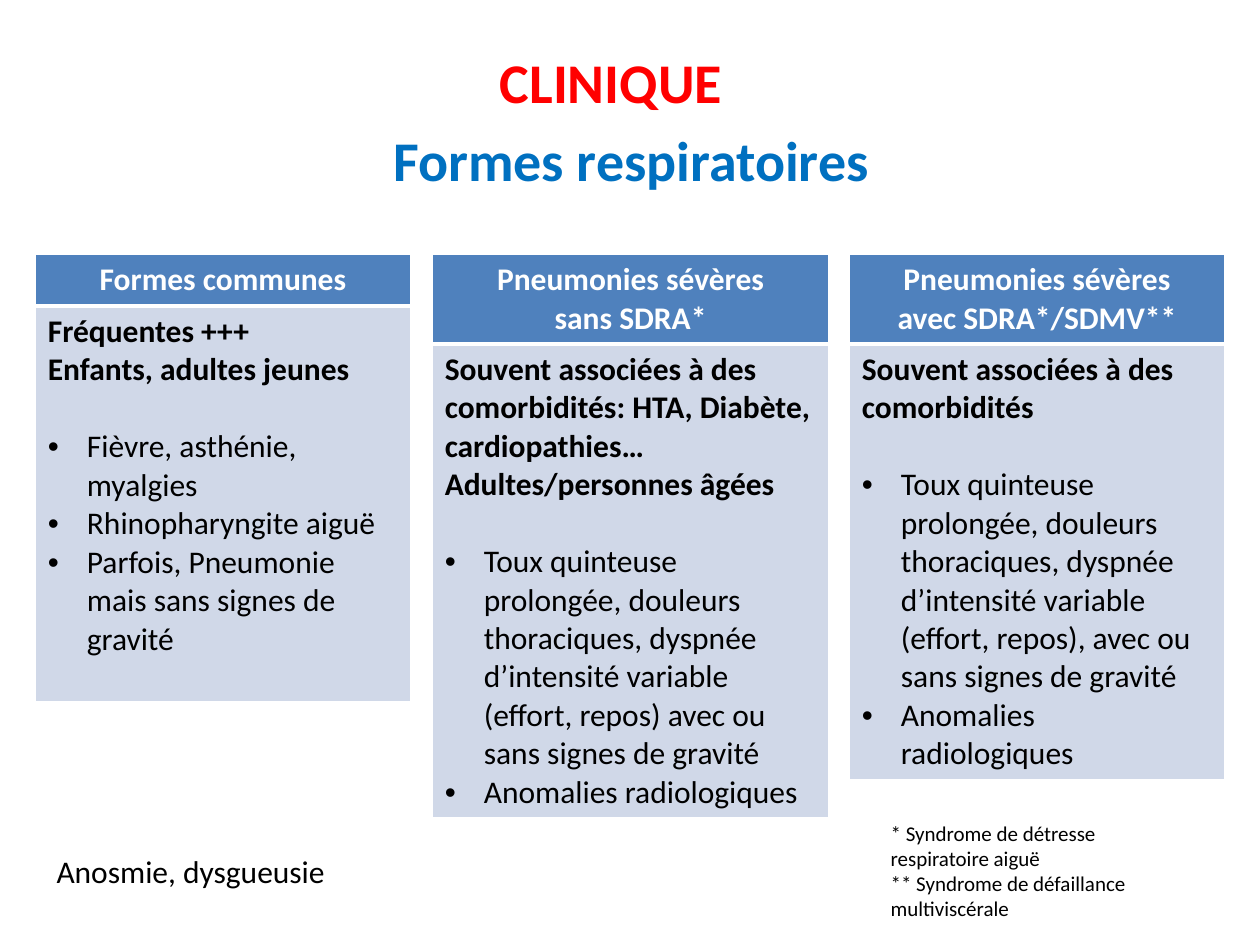
from lxml import etree
from pptx import Presentation
from pptx.dml.color import RGBColor
from pptx.enum import text as t
from pptx.oxml import ns
from pptx.util import Inches, Pt

COLORS = {"title": "FF0000", "subtitle": "0070C0", "header": "4F81BD",
          "body": "D0D8E8", "white": "FFFFFF", "black": "000000"}

FORMS = [
    ((0.28, 2.02, 2.98), (0.41, 3.14),
     ["Formes communes"],
     ["Fréquentes +++", "Enfants, adultes jeunes"],
     ["Fièvre, asthénie, myalgies", "Rhinopharyngite aiguë",
      "Parfois, Pneumonie mais sans signes de gravité"]),
    ((3.43, 2.02, 3.15), (0.7, 3.76),
     ["Pneumonies sévères", "sans SDRA*"],
     ["Souvent associées à des comorbidités: HTA, Diabète, cardiopathies…",
      "Adultes/personnes âgées"],
     ["Toux quinteuse prolongée, douleurs thoraciques, dyspnée d’intensité "
      "variable (effort, repos) avec ou sans signes de gravité",
      "Anomalies radiologiques"]),
    ((6.74, 2.02, 2.98), (0.7, 3.46),
     ["Pneumonies sévères", "avec SDRA*/SDMV**"],
     ["Souvent associées à des comorbidités"],
     ["Toux quinteuse prolongée, douleurs thoraciques, dyspnée d’intensité "
      "variable (effort, repos), avec ou sans signes de gravité",
      "Anomalies radiologiques"]),
]


def rgb(name):
    return RGBColor.from_string(COLORS[name])


def style(paragraph, size, color, bold=False, align=t.PP_ALIGN.LEFT):
    paragraph.alignment = align
    for run in paragraph.runs:
        run.font.name = "Calibri"
        run.font.size = Pt(size)
        run.font.bold = bold
        run.font.color.rgb = rgb(color)


def add_bullet(paragraph):
    properties = paragraph._p.get_or_add_pPr()
    properties.set("marL", str(Inches(0.31)))
    properties.set("indent", str(-Inches(0.31)))
    etree.SubElement(properties, ns.qn("a:buFont")).set("typeface", "Arial")
    etree.SubElement(properties, ns.qn("a:buChar")).set("char", "•")


def format_cell(cell, fill, bottom_width):
    properties = cell._tc.get_or_add_tcPr()
    for side, width in (("lnL", 1), ("lnR", 1), ("lnT", 1), ("lnB", bottom_width)):
        border = etree.SubElement(properties, ns.qn(f"a:{side}"), w=str(Pt(width)))
        solid = etree.SubElement(border, ns.qn("a:solidFill"))
        etree.SubElement(solid, ns.qn("a:srgbClr"), val=COLORS["white"])
    cell.fill.solid()
    cell.fill.fore_color.rgb = rgb(fill)


def place_heading(heading, box, wording, color):
    heading.left, heading.top, heading.width, heading.height = map(Inches, box)
    frame = heading.text_frame
    frame.word_wrap = True
    frame.auto_size = t.MSO_AUTO_SIZE.NONE
    frame.vertical_anchor = t.MSO_ANCHOR.TOP
    frame.margin_top = Inches(0.08)
    frame.text = wording
    style(frame.paragraphs[0], 32, color, True, t.PP_ALIGN.CENTER)


def add_form(slide, box, heights, header_lines, profile, signs):
    left, top, width = map(Inches, box)
    table = slide.shapes.add_table(2, 1, left, top, width, Inches(sum(heights))).table
    for row, height in zip(table.rows, heights):
        row.height = Inches(height)
    header, body = table.cell(0, 0), table.cell(1, 0)
    format_cell(header, "header", 3)
    format_cell(body, "body", 1)

    header.text_frame.text = "\n".join(header_lines)
    for line in header.text_frame.paragraphs:
        style(line, 18, "white", True, t.PP_ALIGN.CENTER)

    body.text_frame.text = "\n".join(profile + signs)
    for index, line in enumerate(body.text_frame.paragraphs):
        is_sign = index >= len(profile)
        if is_sign:
            add_bullet(line)
        if index == len(profile):
            line.space_before = Pt(22)
        style(line, 18, "black", not is_sign)


def add_note(slide, box, lines, size):
    frame = slide.shapes.add_textbox(*map(Inches, box)).text_frame
    frame.word_wrap = True
    frame.text = "\n".join(lines)
    for line in frame.paragraphs:
        style(line, size, "black")


def main():
    deck = Presentation()
    deck.slide_width, deck.slide_height = Inches(10), Inches(7.5)
    slide = deck.slides.add_slide(deck.slide_layouts[5])
    place_heading(slide.shapes.title, (0.35, 0.3, 9, 0.77), "CLINIQUE", "title")
    subtitle_box = (0.51, 0.92, 9, 0.77)
    subtitle = slide.shapes.add_textbox(*map(Inches, subtitle_box))
    place_heading(subtitle, subtitle_box, "Formes respiratoires", "subtitle")
    for form in FORMS:
        add_form(slide, *form)
    add_note(slide, (0.35, 6.71, 2.59, 0.4), ["Anosmie, dysgueusie"], 18)
    add_note(slide, (6.97, 6.46, 2.39, 0.91),
             ["* Syndrome de détresse respiratoire aiguë",
              "** Syndrome de défaillance multiviscérale"], 12)
    deck.save("out.pptx")


if __name__ == "__main__":
    main()
